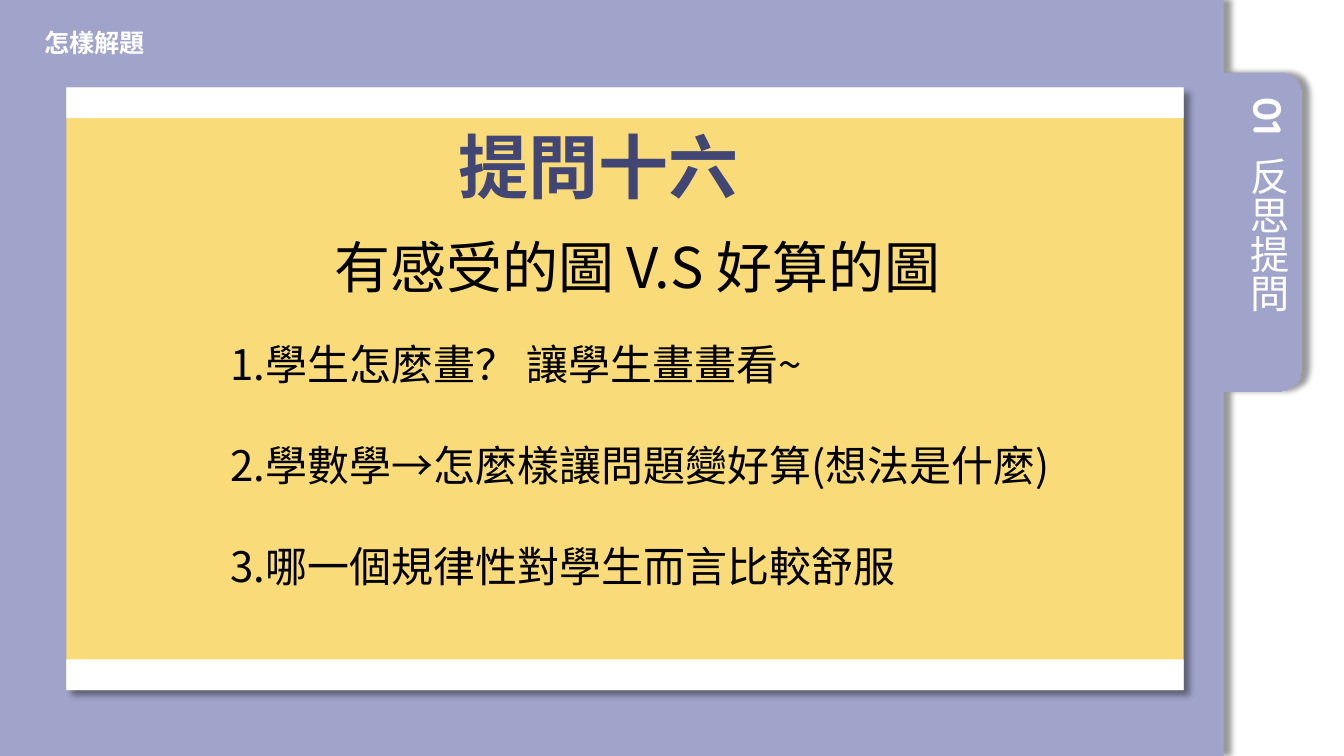
from math import cos, pi, sin

from lxml.etree import SubElement
from pptx import Presentation
from pptx.dml.color import RGBColor
from pptx.enum.shapes import MSO_SHAPE as Shape
from pptx.enum.text import PP_ALIGN as Align
from pptx.oxml.ns import qn
from pptx.util import Pt

CJK = "Noto Sans CJK SC"
LATIN = "Quicksand"
WHITE, LAVENDER, YELLOW, NAVY, BLACK = "FFFFFF", "A0A4CA", "F9DB7A", "414674", "000000"


def paint(shape, color, shadow_angle=None):
    """Fill a shape without outline; cast a soft shadow if an angle is given."""
    shape.shadow.inherit = False
    shape.fill.solid()
    shape.fill.fore_color.rgb = RGBColor.from_string(color)
    shape.line.fill.background()
    if shadow_angle is not None:
        effects = shape._element.spPr.find(qn("a:effectLst"))
        shadow = SubElement(effects, qn("a:outerShdw"), blurRad=str(Pt(4)), dist=str(Pt(6)),
                            dir=str(shadow_angle * 60000), algn="tl", rotWithShape="0")
        shade = SubElement(shadow, qn("a:srgbClr"), val=BLACK)
        SubElement(shade, qn("a:alpha"), val="40000")


def add_text(box, paragraphs, size, color, bold=False, align=Align.LEFT,
             spacing=1.0, gap=0, vertical=False):
    """Add a text box; each paragraph is a list of (text, font) runs."""
    frame = slide.shapes.add_textbox(*[Pt(value) for value in box]).text_frame
    frame.word_wrap = True
    if vertical:
        frame._txBody.bodyPr.set("vert", "eaVert")
    for index, runs in enumerate(paragraphs):
        paragraph = frame.add_paragraph() if index else frame.paragraphs[0]
        paragraph.alignment = align
        paragraph.line_spacing = spacing
        paragraph.space_before = Pt(gap if index else 0)
        for text, font in runs:
            run = paragraph.add_run()
            run.text = text
            run.font.name = font
            run.font.size = Pt(size)
            run.font.bold = bold
            run.font.color.rgb = RGBColor.from_string(color)
            SubElement(run._r.rPr, qn("a:ea"), typeface=CJK)


presentation = Presentation()
presentation.slide_width = Pt(960)
presentation.slide_height = Pt(540)
slide = presentation.slides.add_slide(presentation.slide_layouts[6])

# Lavender page with a round-cornered tab on its right edge
page_right, tab_right, tab_top, tab_bottom, radius = 874, 930, 52, 279.5, 15
outline = [(page_right, 0), (page_right, tab_top)]
for center_y, start in ((tab_top + radius, -pi / 2), (tab_bottom - radius, 0)):
    for step in range(13):
        angle = start + step * pi / 24
        outline.append((tab_right - radius + radius * cos(angle),
                        center_y + radius * sin(angle)))
outline += [(page_right, tab_bottom), (page_right, 540), (0, 540)]
builder = slide.shapes.build_freeform(0, 0, scale=Pt(1))
builder.add_line_segments(outline, close=True)
paint(builder.convert_to_shape(), LAVENDER, shadow_angle=0)

add_text((875.5, 105, 47.5, 171.5), [[("反思提問", CJK)]], 28, WHITE, spacing=0.9, vertical=True)
add_text((875.5, 62.5, 47.5, 42.5), [[("01", LATIN)]], 28, WHITE, bold=True,
         spacing=0.9, vertical=True)
add_text((24.5, 18.5, 310, 28), [[("怎樣解題", LATIN)]], 18, WHITE, bold=True, spacing=0.9)

# Yellow card with a white band along its top and bottom
card_left, card_top, card_width, card_height, band_height = 47.5, 62.5, 798, 430.5, 22
card_bottom = card_top + card_height
for top, height, color, angle in ((card_top, card_height, YELLOW, 45),
                                  (card_top, band_height, WHITE, None),
                                  (card_bottom - band_height, band_height, WHITE, None)):
    panel = slide.shapes.add_shape(Shape.RECTANGLE, Pt(card_left), Pt(top),
                                   Pt(card_width), Pt(height))
    paint(panel, color, angle)

add_text((320.5, 85, 214.5, 67.5), [[("提問十六", CJK)]], 50, NAVY, bold=True, align=Align.CENTER)
add_text((83, 148.5, 744.5, 64), [[("有感受的圖 V.S 好算的圖", CJK)]], 40, BLACK,
         align=Align.CENTER, spacing=1.3)
questions = [
    [("1.學生怎麼畫？ 讓學生畫畫看~", CJK)],
    [("2.學數學", CJK), ("→", LATIN), ("怎麼樣讓問題變好算(想法是什麼)", CJK)],
    [("3.哪一個規律性對學生而言比較舒服", CJK)],
]
add_text((157.5, 238.5, 610, 189.5), questions, 30, BLACK, gap=36)

presentation.save("out.pptx")
